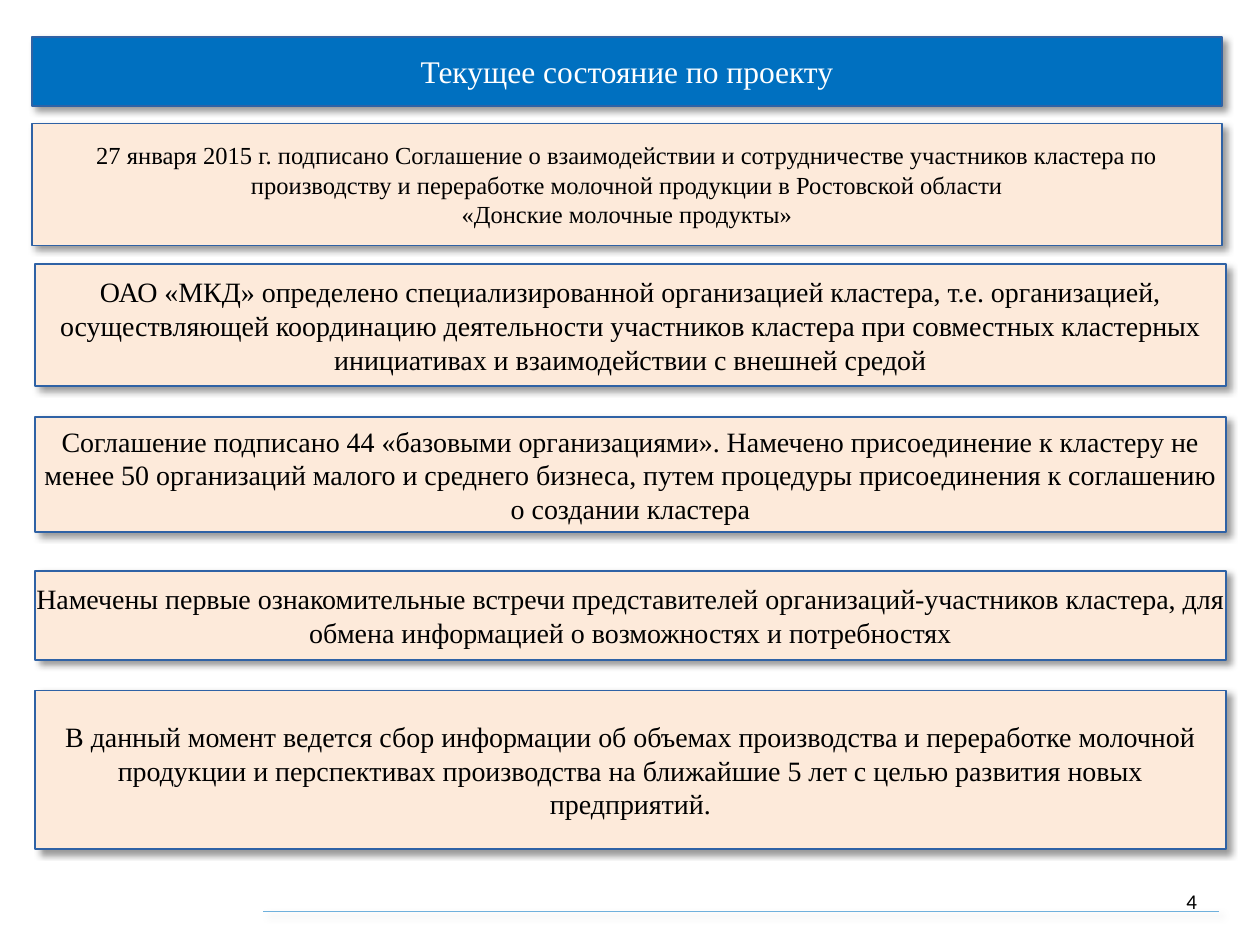
"""Build the slide on the current state of the dairy cluster project."""
import lxml.etree
import pptx
import pptx.dml.color
import pptx.enum.shapes
import pptx.enum.text
import pptx.oxml.ns
import pptx.util

Cm = pptx.util.Cm
Pt = pptx.util.Pt
ALIGN = pptx.enum.text.PP_ALIGN
COLORS = {
    "title": "0070C0",
    "panel": "FDEADA",
    "border": "2F62A5",
    "rule": "6FB0DC",
    "white": "FFFFFF",
    "black": "000000",
}
BANNER = {"left": 0.64, "size": 18, "fill": "title", "color": "white"}
AGREEMENT = {"left": 0.64, "size": 14, "fill": "panel", "color": "black"}
STATUS = {"left": 0.71, "size": 16, "fill": "panel", "color": "black"}
PANELS = [
    (0.74, 1.4, BANNER, ["Текущее состояние по проекту"]),
    (2.49, 2.46, AGREEMENT, [
        "27 января 2015 г. подписано Соглашение о взаимодействии и "
        "сотрудничестве участников кластера по",
        "производству и переработке молочной продукции в Ростовской области",
        "«Донские молочные продукты»",
    ]),
    (5.33, 2.46, STATUS, [
        "ОАО «МКД» определено специализированной организацией кластера, т.е. "
        "организацией, осуществляющей координацию деятельности участников "
        "кластера при совместных кластерных инициативах и взаимодействии "
        "с внешней средой",
    ]),
    (8.41, 2.31, STATUS, [
        "Соглашение подписано 44 «базовыми организациями». Намечено "
        "присоединение к кластеру не менее 50 организаций малого и среднего "
        "бизнеса, путем процедуры присоединения к соглашению о создании кластера",
    ]),
    (11.51, 1.8, STATUS, [
        "Намечены первые ознакомительные встречи представителей "
        "организаций-участников кластера, для обмена информацией о "
        "возможностях и потребностях",
    ]),
    (13.92, 3.2, STATUS, [
        "В данный момент ведется сбор информации об объемах производства и "
        "переработке молочной продукции и перспективах производства на "
        "ближайшие 5 лет с целью развития новых предприятий.",
    ]),
]
FRAME_FORMAT = {
    "margin_left": 0,
    "margin_top": 0,
    "margin_right": 0,
    "margin_bottom": 0,
    "word_wrap": True,
    "vertical_anchor": pptx.enum.text.MSO_ANCHOR.MIDDLE,
}


def add_shadow(shape, opacity):
    """Give the shape a soft shadow down to the right."""
    properties = shape.element.spPr
    tag = pptx.oxml.ns.qn
    for effects in properties.findall(tag("a:effectLst")):
        properties.remove(effects)
    effects = lxml.etree.SubElement(properties, tag("a:effectLst"))
    shadow = lxml.etree.SubElement(
        effects, tag("a:outerShdw"), blurRad=str(Pt(4)), dist=str(Pt(3)),
        dir="2700000", algn="tl", rotWithShape="0")
    color = lxml.etree.SubElement(shadow, tag("a:srgbClr"), val=COLORS["black"])
    lxml.etree.SubElement(color, tag("a:alpha"), val=str(opacity * 1000))


def write_text(shape, lines, alignment, font_name, size, color):
    """Fill the shape with one formatted paragraph per line."""
    frame = shape.text_frame
    for name, value in FRAME_FORMAT.items():
        setattr(frame, name, value)
    frame.text = "\n".join(lines)
    for paragraph in frame.paragraphs:
        paragraph.alignment = alignment
        font_format = {"name": font_name, "size": Pt(size)}
        for name, value in font_format.items():
            setattr(paragraph.font, name, value)
        paragraph.font.color.rgb = pptx.dml.color.RGBColor.from_string(COLORS[color])


presentation = pptx.Presentation()
presentation.slide_width = Cm(25.4)
presentation.slide_height = Cm(19.05)
slide = presentation.slides.add_slide(presentation.slide_layouts[6])

for top, height, style, lines in PANELS:
    panel = slide.shapes.add_shape(
        pptx.enum.shapes.MSO_SHAPE.RECTANGLE,
        Cm(style["left"]), Cm(top), Cm(24), Cm(height))
    panel.fill.solid()
    panel.fill.fore_color.rgb = pptx.dml.color.RGBColor.from_string(COLORS[style["fill"]])
    panel.line.color.rgb = pptx.dml.color.RGBColor.from_string(COLORS["border"])
    panel.line.width = Pt(1)
    add_shadow(panel, 40)
    write_text(panel, lines, ALIGN.CENTER, "Times New Roman", style["size"], style["color"])

footer_rule = slide.shapes.add_connector(
    pptx.enum.shapes.MSO_CONNECTOR.STRAIGHT, Cm(5.31), Cm(18.38), Cm(24.57), Cm(18.38))
footer_rule.line.color.rgb = pptx.dml.color.RGBColor.from_string(COLORS["rule"])
footer_rule.line.width = Pt(0.75)
add_shadow(footer_rule, 20)

page_number = slide.shapes.add_textbox(Cm(18.21), Cm(17.65), Cm(5.92), Cm(1.02))
write_text(page_number, ["4"], ALIGN.RIGHT, "Calibri", 12, "black")

presentation.save("out.pptx")
